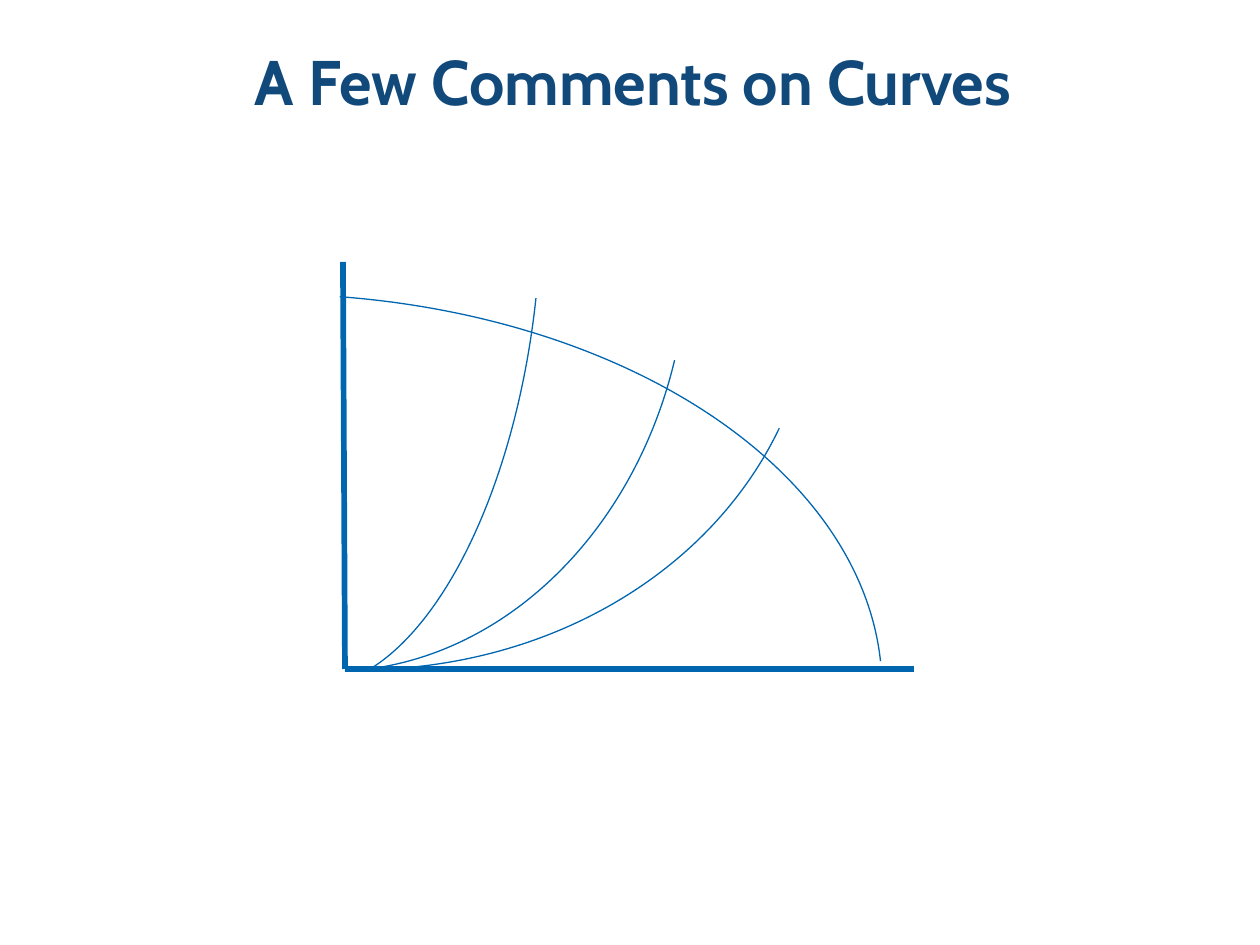
from lxml import etree
from pptx import Presentation
from pptx.dml.color import RGBColor
from pptx.enum.shapes import MSO_CONNECTOR, MSO_SHAPE
from pptx.enum.text import MSO_ANCHOR, PP_ALIGN
from pptx.oxml.ns import qn
from pptx.util import Pt

STRAIGHT = MSO_CONNECTOR.STRAIGHT
ARC = MSO_SHAPE.ARC
TOP = MSO_ANCHOR.TOP
CENTER = PP_ALIGN.CENTER

PX_PER_INCH = 126
FONT = "Cabin"
COLORS = {"title": "11497B", "curve": "0066B0"}
ADJ_PER_DEGREE = 0.6
TILT = 186.1


def px(n):
    return round(n * 914400 / PX_PER_INCH)


def color(name):
    return RGBColor.from_string(COLORS[name])


def style_line(sp, width):
    sp.line.color.rgb = color("curve")
    sp.line.width = Pt(width)


def set_title(slide, text, x, y, w, h):
    sp = slide.shapes.title
    sp.left, sp.top, sp.width, sp.height = px(x), px(y), px(w), px(h)
    tf = sp.text_frame
    tf.word_wrap = True
    tf.vertical_anchor = TOP
    tf.margin_left = tf.margin_top = tf.margin_right = tf.margin_bottom = 0
    p = tf.paragraphs[0]
    p.alignment = CENTER
    r = p.add_run()
    r.text = text
    r.font.name = FONT
    r.font.size = Pt(36)
    r.font.bold = True
    r.font.color.rgb = color("title")


def add_axis(slide, start, end, width):
    ends = [px(n) for n in (*start, *end)]
    sp = slide.shapes.add_connector(STRAIGHT, *ends)
    style_line(sp, width)
    etree.SubElement(sp._element.spPr, qn("a:effectLst"))


def add_arc(slide, box, start, end, tilted=False):
    sp = slide.shapes.add_shape(ARC, *[px(n) for n in box])
    sp.shadow.inherit = False
    sp.fill.background()
    style_line(sp, 0.75)
    sp.adjustments[0] = start * ADJ_PER_DEGREE
    sp.adjustments[1] = end * ADJ_PER_DEGREE
    if tilted:
        sp.rotation = TILT
        sp._element.spPr.xfrm.set("flipH", "1")


def main():
    prs = Presentation()
    prs.slide_width, prs.slide_height = px(1260), px(945)
    slide = prs.slides.add_slide(prs.slide_layouts[5])
    set_title(slide, "A Few Comments on Curves", 53, 42, 1160, 77)

    add_arc(slide, (-346, 294, 1228, 789), 280.38, 357.45)
    rising_curves = [
        ((3, -147, 684, 819), 276.09, 349.6),
        ((-125, -145, 940, 814), 276.09, 345.15),
        ((160, -132, 377, 820), 278.79, 0),
    ]
    for box, start, end in rising_curves:
        add_arc(slide, box, start, end, tilted=True)

    origin = (345, 669)
    add_axis(slide, (343, 262), origin, 3.25)
    add_axis(slide, origin, (914, 669), 3)
    prs.save("out.pptx")


if __name__ == "__main__":
    main()
